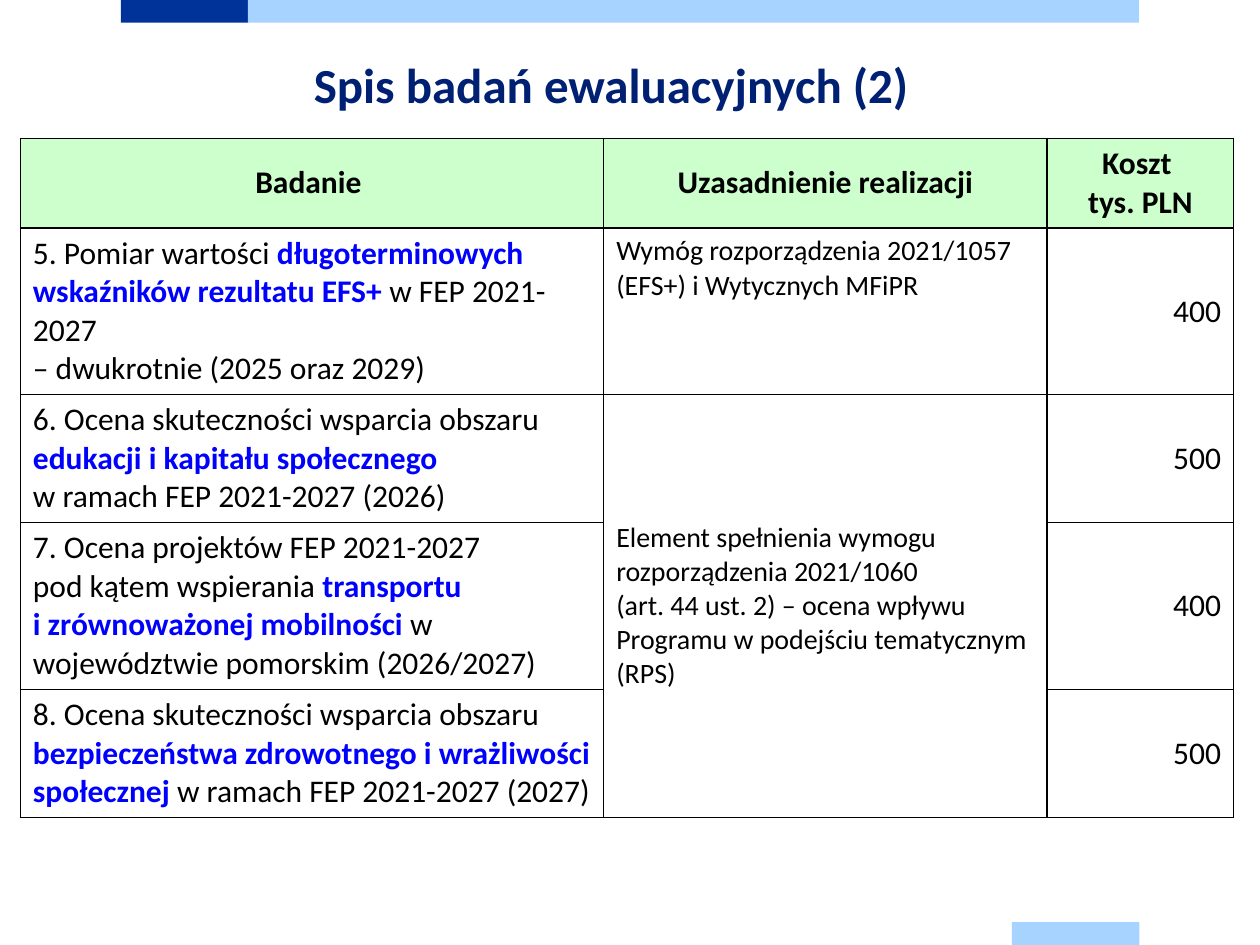
from lxml.etree import SubElement
from pptx import Presentation
from pptx.dml.color import RGBColor
from pptx.enum.shapes import MSO_SHAPE
from pptx.enum.text import MSO_ANCHOR, PP_ALIGN
from pptx.oxml.ns import qn
from pptx.util import Cm, Pt

BLACK = "000000"
BLUE = "0000FF"
NAVY = "002073"
DARK_BAR = "003399"
LIGHT_BAR = "A6D3FF"
HEADER_GREEN = "CCFFCC"

COLUMN_WIDTHS = [11.76, 8.94, 3.76]
ROW_HEIGHTS = [1.8, 3.36, 2.58, 3.36, 2.58]
HEADERS = ["Badanie ", "Uzasadnienie realizacji", "Koszt \ntys. PLN"]
STUDIES = [
    ("5. Pomiar wartości ", "długoterminowych wskaźników rezultatu EFS+ ",
     "w FEP 2021-2027 \n– dwukrotnie (2025 oraz 2029)", "400"),
    ("6. Ocena skuteczności wsparcia obszaru ", "edukacji i kapitału społecznego \n",
     "w ramach FEP 2021-2027 (2026)", "500"),
    ("7. Ocena projektów FEP 2021-2027 \npod kątem wspierania ",
     "transportu \ni zrównoważonej mobilności ",
     "w województwie pomorskim (2026/2027)", "400"),
    ("8. Ocena skuteczności wsparcia obszaru ",
     "bezpieczeństwa zdrowotnego i wrażliwości społecznej ",
     "w ramach FEP 2021-2027 (2027)", "500"),
]
REQUIREMENT = "Wymóg rozporządzenia 2021/1057 (EFS+) i Wytycznych MFiPR"
THEMATIC_REASON = (
    "Element spełnienia wymogu rozporządzenia 2021/1060 \n"
    "(art. 44 ust. 2) – ocena wpływu Programu w podejściu tematycznym (RPS)"
)


def color(value):
    return RGBColor.from_string(value)


class SlideBuilder:
    font_name = "Calibri"

    def __init__(self, slide):
        self.slide = slide

    def bar(self, left, top, width, fill):
        shape = self.slide.shapes.add_shape(
            MSO_SHAPE.RECTANGLE, Cm(left), Cm(top), Cm(width), Cm(0.46))
        shape.shadow.inherit = False
        shape.fill.solid()
        shape.fill.fore_color.rgb = color(fill)
        shape.line.fill.background()

    def fill_paragraph(self, paragraph, parts, size, alignment):
        paragraph.alignment = alignment
        paragraph.font.name = self.font_name
        paragraph.font.size = Pt(size)
        for text, text_color, bold in parts:
            for index, line in enumerate(text.split("\n")):
                if index:
                    paragraph.add_line_break()
                if line:
                    run = paragraph.add_run()
                    run.text = line
                    run.font.bold = bold
                    run.font.color.rgb = color(text_color)

    def title(self, text):
        shape = self.slide.shapes.title
        shape.left, shape.top = Cm(0.43), Cm(0.69)
        shape.width, shape.height = Cm(23.77), Cm(2.11)
        frame = shape.text_frame
        frame.margin_left = frame.margin_right = 0
        frame.margin_top = frame.margin_bottom = 0
        frame.vertical_anchor = MSO_ANCHOR.MIDDLE
        paragraph = frame.paragraphs[0]
        paragraph.line_spacing = Pt(30.8)
        self.fill_paragraph(paragraph, [(text, NAVY, True)], 28, PP_ALIGN.CENTER)

    def table(self, left, top, column_widths, row_heights):
        table = self.slide.shapes.add_table(
            len(row_heights), len(column_widths), Cm(left), Cm(top),
            Cm(sum(column_widths)), Cm(sum(row_heights))).table
        table.first_row = False
        table.horz_banding = False
        for column, width in zip(table.columns, column_widths):
            column.width = Cm(width)
        for row, height in zip(table.rows, row_heights):
            row.height = Cm(height)
        for cell in table.iter_cells():
            self.borders(cell)
            cell.fill.background()
        return table

    def borders(self, cell):
        properties = cell._tc.get_or_add_tcPr()
        for side in ("a:lnL", "a:lnR", "a:lnT", "a:lnB"):
            line = SubElement(properties, qn(side), w=str(Pt(1)))
            fill = SubElement(line, qn("a:solidFill"))
            SubElement(fill, qn("a:srgbClr"), val=BLACK)

    def cell(self, cell, parts, size=18, alignment=PP_ALIGN.LEFT,
             anchor=MSO_ANCHOR.MIDDLE, fill=None):
        cell.vertical_anchor = anchor
        if fill:
            cell.fill.solid()
            cell.fill.fore_color.rgb = color(fill)
        self.fill_paragraph(cell.text_frame.paragraphs[0], parts, size, alignment)


def main():
    presentation = Presentation()
    presentation.slide_width = Cm(25.4)
    presentation.slide_height = Cm(19.05)
    slide = presentation.slides.add_slide(presentation.slide_layouts[5])
    builder = SlideBuilder(slide)

    builder.bar(2.44, 0, 2.57, DARK_BAR)
    builder.bar(5, 0, 17.96, LIGHT_BAR)
    builder.bar(20.4, 18.59, 2.57, LIGHT_BAR)
    builder.title("Spis badań ewaluacyjnych (2)")

    table = builder.table(0.41, 2.79, COLUMN_WIDTHS, ROW_HEIGHTS)
    for column, header in enumerate(HEADERS):
        builder.cell(table.cell(0, column), [(header, BLACK, True)],
                     alignment=PP_ALIGN.CENTER, fill=HEADER_GREEN)
    for row, (opening, topic, ending, cost) in enumerate(STUDIES, start=1):
        study = [(opening, BLACK, False), (topic, BLUE, True), (ending, BLACK, False)]
        anchor = MSO_ANCHOR.MIDDLE if row == 1 else MSO_ANCHOR.TOP
        builder.cell(table.cell(row, 0), study, anchor=anchor)
        builder.cell(table.cell(row, 2), [(cost, BLACK, False)],
                     alignment=PP_ALIGN.RIGHT)

    builder.cell(table.cell(1, 1), [(REQUIREMENT, BLACK, False)],
                 size=16, anchor=MSO_ANCHOR.TOP)
    table.cell(2, 1).merge(table.cell(4, 1))
    builder.cell(table.cell(2, 1), [(THEMATIC_REASON, BLACK, False)], size=16)

    presentation.save("out.pptx")


if __name__ == "__main__":
    main()
